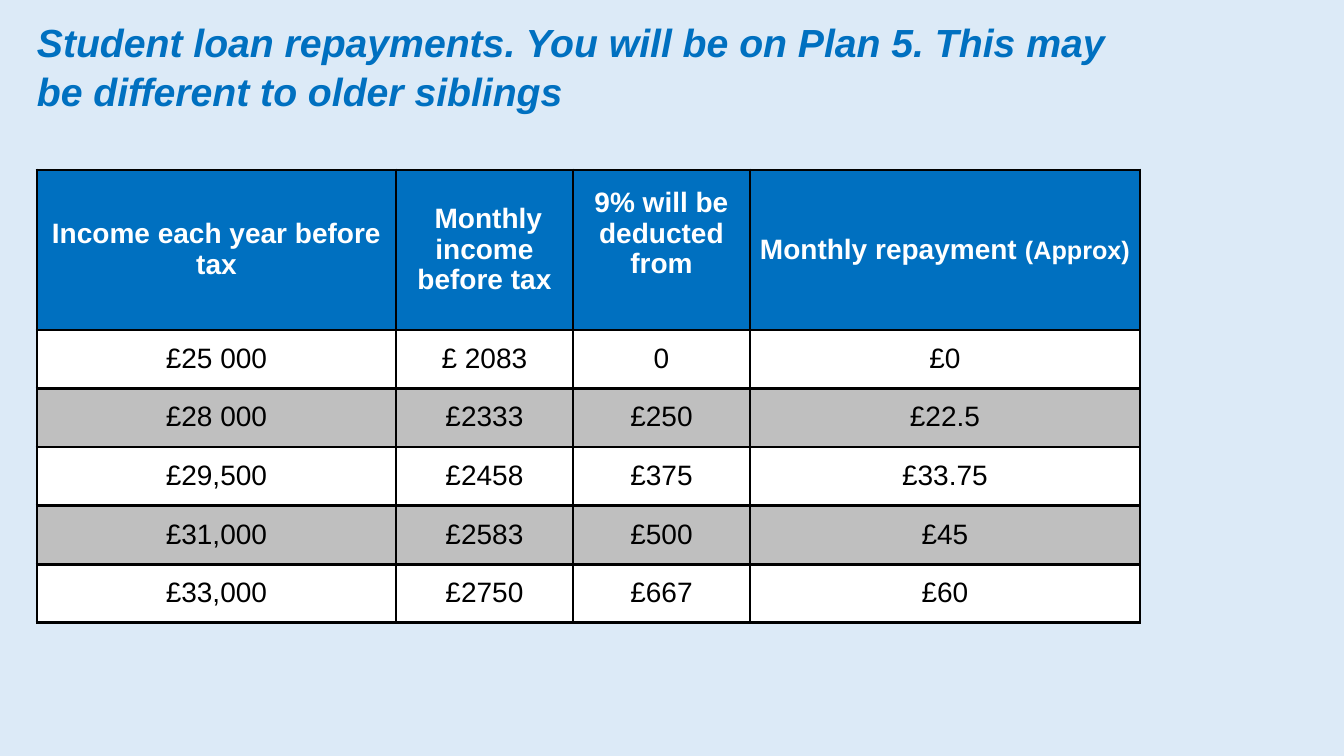
from lxml import etree
from pptx import Presentation
from pptx import util as u
from pptx.dml.color import RGBColor
from pptx.enum import text
from pptx.oxml.ns import qn

COLOURS = {
    "background": "DCEAF7",
    "blue": "0070C0",
    "white": "FFFFFF",
    "grey": "BFBFBF",
    "black": "000000",
}
FONT = "Arial"
PX_PER_INCH = 100.8
TITLE = ("Student loan repayments. You will be on Plan 5. "
         "This may be different to older siblings")
HEADINGS = [
    [("Income each year before tax", 20)],
    [(" Monthly income before tax", 20)],
    [("9% will be deducted from", 20)],
    [("Monthly repayment ", 20), ("(Approx)", 18)],
]
REPAYMENTS = [
    ("£25 000", "£ 2083", "0", "£0"),
    ("£28 000", "£2333", "£250", "£22.5"),
    ("£29,500", "£2458", "£375", "£33.75"),
    ("£31,000", "£2583", "£500", "£45"),
    ("£33,000", "£2750", "£667", "£60"),
]
COLUMN_WIDTHS = [359, 177, 177, 390]
HEADER_HEIGHT = 160
BODY_HEIGHT = 293


def px(length):
    return u.Inches(length / PX_PER_INCH)


def colour(name):
    return RGBColor.from_string(COLOURS[name])


def add_run(paragraph, words, size, colour_name, bold=False, italic=False):
    run = paragraph.add_run()
    run.text = words
    font = run.font
    font.name = FONT
    font.size = u.Pt(size)
    font.bold = bold
    font.italic = italic
    font.color.rgb = colour(colour_name)


def add_title(slide):
    shape = slide.shapes.add_textbox(px(37), px(16), px(1108), px(95))
    frame = shape.text_frame
    frame.word_wrap = True
    frame.margin_left = frame.margin_right = 0
    frame.margin_top = frame.margin_bottom = 0
    paragraph = frame.paragraphs[0]
    paragraph.line_spacing = 1.05
    add_run(paragraph, TITLE, 28, "blue", bold=True, italic=True)


def add_borders(cell):
    properties = cell._tc.get_or_add_tcPr()
    for side in ("a:lnL", "a:lnR", "a:lnT", "a:lnB"):
        line = etree.SubElement(properties, qn(side), w=str(u.Pt(2.25)))
        fill = etree.SubElement(line, qn("a:solidFill"))
        etree.SubElement(fill, qn("a:srgbClr"), val=COLOURS["black"])


def fill_cell(cell, runs, fill_name, text_name, bold=False):
    add_borders(cell)
    cell.fill.solid()
    cell.fill.fore_color.rgb = colour(fill_name)
    cell.vertical_anchor = text.MSO_ANCHOR.MIDDLE
    cell.margin_left = cell.margin_right = px(6)
    cell.margin_top = cell.margin_bottom = px(6)
    paragraph = cell.text_frame.paragraphs[0]
    paragraph.alignment = text.PP_ALIGN.CENTER
    paragraph.line_spacing = 0.97
    for words, size in runs:
        add_run(paragraph, words, size, text_name, bold)


def add_repayment_table(slide):
    frame = slide.shapes.add_table(
        len(REPAYMENTS) + 1, len(HEADINGS), px(37), px(170),
        px(sum(COLUMN_WIDTHS)), px(HEADER_HEIGHT + BODY_HEIGHT))
    table = frame.table
    for column, width in zip(table.columns, COLUMN_WIDTHS):
        column.width = px(width)
    for row in table.rows:
        row.height = px(BODY_HEIGHT / len(REPAYMENTS))
    table.rows[0].height = px(HEADER_HEIGHT)
    for index, runs in enumerate(HEADINGS):
        fill_cell(table.cell(0, index), runs, "blue", "white", bold=True)
    table.cell(0, 2).margin_bottom = px(38)
    for row_index, values in enumerate(REPAYMENTS, 1):
        fill_name = "white" if row_index % 2 else "grey"
        for index, value in enumerate(values):
            fill_cell(table.cell(row_index, index), [(value, 20)], fill_name, "black")


def main():
    presentation = Presentation()
    presentation.slide_width = px(1344)
    presentation.slide_height = px(756)
    slide = presentation.slides.add_slide(presentation.slide_layouts[6])
    slide.background.fill.solid()
    slide.background.fill.fore_color.rgb = colour("background")
    add_repayment_table(slide)
    add_title(slide)
    presentation.save("out.pptx")


if __name__ == "__main__":
    main()
